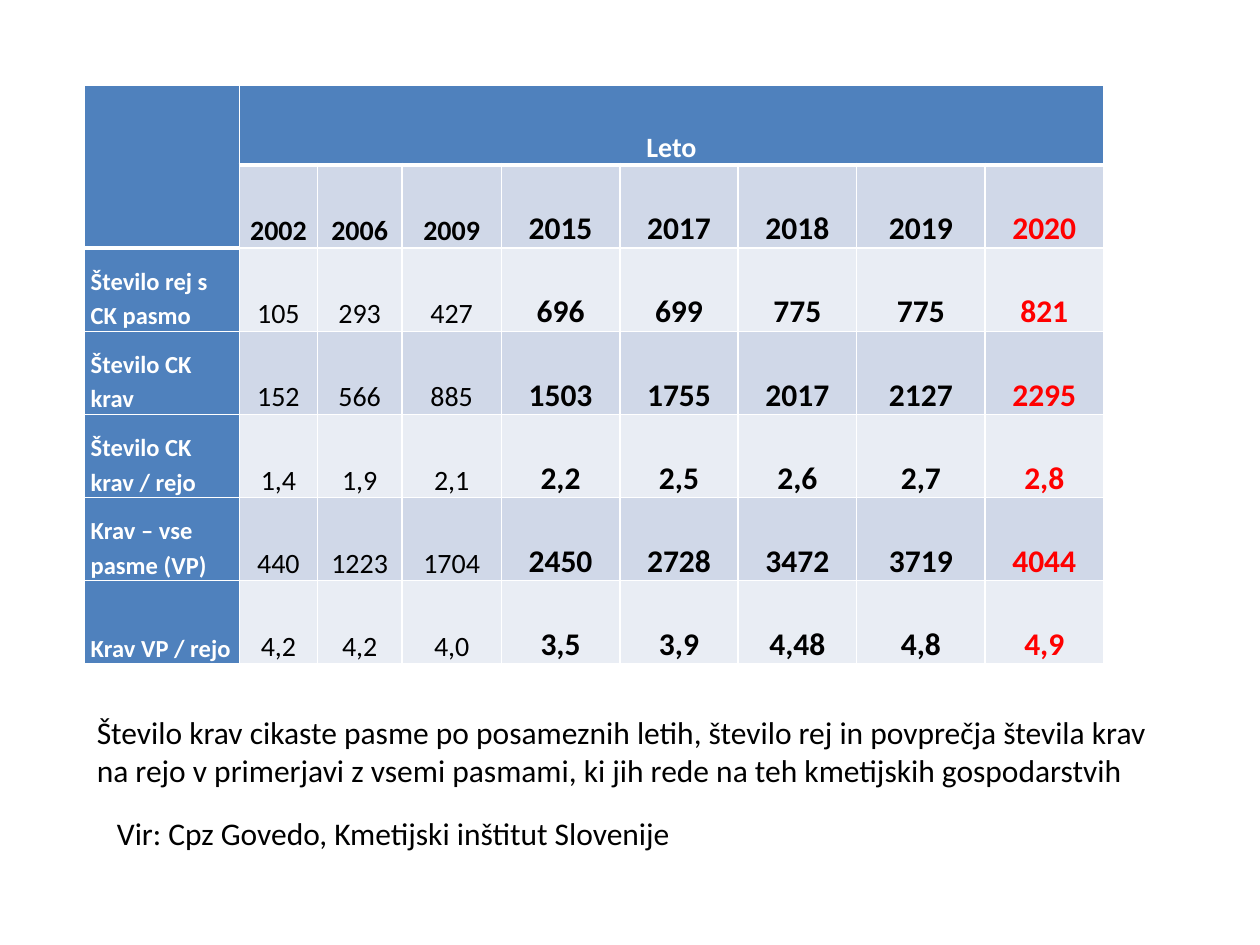
from pptx import Presentation
from pptx.dml.color import RGBColor
from pptx.enum.text import MSO_ANCHOR as Anchor, PP_ALIGN as Align
from pptx.oxml import parse_xml
from pptx.oxml.ns import nsdecls
from pptx.util import Inches, Pt

YEARS = ["2002", "2006", "2009", "2015", "2017", "2018", "2019", "2020"]
HERD_ROWS = [
    ("Število rej s CK pasmo", "105 293 427 696 699 775 775 821"),
    ("Število CK krav", "152 566 885 1503 1755 2017 2127 2295"),
    ("Število CK krav / rejo", "1,4 1,9 2,1 2,2 2,5 2,6 2,7 2,8"),
    ("Krav – vse pasme (VP)", "440 1223 1704 2450 2728 3472 3719 4044"),
    ("Krav VP / rejo", "4,2 4,2 4,0 3,5 3,9 4,48 4,8 4,9"),
]
COLUMN_WIDTHS = [1.23, 0.62, 0.67, 0.79, 0.94, 0.94, 0.94, 1.02, 0.94]
ROW_HEIGHTS = [0.63] + [0.66] * 6
FIRST_LARGE_COLUMN = 4
LAST_COLUMN = len(YEARS)
CAPTION = ("Število krav cikaste pasme po posameznih letih, število rej in povprečja "
           "števila krav na rejo v primerjavi z vsemi pasmami, ki jih rede na teh "
           "kmetijskih gospodarstvih")
SOURCE = "Vir: Cpz Govedo, Kmetijski inštitut Slovenije"


def color(value):
    return RGBColor.from_string(value)


class SlideMaker:
    font = "Calibri"
    black, white, red = "000000", "FFFFFF", "FF0000"
    header_fill = "4F81BD"
    bands = ["E9EDF4", "D0D8E8"]

    def __init__(self, page):
        self.page = page

    def add_text(self, frame, text, size, ink, bold=False):
        para = frame.paragraphs[0]
        span = para.add_run()
        span.text = text
        formats = {"name": self.font, "size": Pt(size), "bold": bold}
        for name, value in formats.items():
            setattr(span.font, name, value)
        span.font.color.rgb = color(ink)
        return para

    def text_box(self, left, top, width, height, text):
        box = self.page.shapes.add_textbox(
            Inches(left), Inches(top), Inches(width), Inches(height))
        box.text_frame.word_wrap = True
        self.add_text(box.text_frame, text, 18, self.black)

    def table(self, left, top, widths, heights):
        table = self.page.shapes.add_table(
            len(heights), len(widths), Inches(left), Inches(top),
            Inches(sum(widths)), Inches(sum(heights))).table
        table.first_row = table.horz_banding = False
        for column, width in zip(table.columns, widths):
            column.width = Inches(width)
        for row, height in zip(table.rows, heights):
            row.height = Inches(height)
        return table

    def borders(self, cell, top=1, bottom=1):
        """Draw white cell borders; widths are in points."""
        for side, width in {"L": 1, "R": 1, "T": top, "B": bottom}.items():
            cell._tc.get_or_add_tcPr().append(parse_xml(
                f'<a:ln{side} {nsdecls("a")} w="{Pt(width)}"><a:solidFill>'
                f'<a:srgbClr val="{self.white}"/></a:solidFill></a:ln{side}>'))

    def cell(self, cell, fill, text="", size=16, ink=white, bold=True,
             align=Align.CENTER, top=1, bottom=1):
        self.borders(cell, top, bottom)
        cell.fill.solid()
        cell.fill.fore_color.rgb = color(fill)
        formats = {"vertical_anchor": Anchor.BOTTOM,
                   "margin_left": Inches(0.05), "margin_right": Inches(0.05),
                   "margin_top": 0, "margin_bottom": 0}
        for name, value in formats.items():
            setattr(cell, name, value)
        if text:
            para = self.add_text(cell.text_frame, text, size, ink, bold)
            para.alignment = align
            para.line_spacing = 1.15

    def herd_table(self):
        table = self.table(0.67, 0.68, COLUMN_WIDTHS, ROW_HEIGHTS)
        table.cell(0, 0).merge(table.cell(1, 0))
        table.cell(0, 1).merge(table.cell(0, LAST_COLUMN))
        for column in range(LAST_COLUMN + 1):
            self.cell(table.cell(0, column), self.header_fill,
                      "Leto" if column == 1 else "", bottom=3)
        self.cell(table.cell(1, 0), self.header_fill, bottom=3)

        body = [("", YEARS)] + [(label, text.split()) for label, text in HERD_ROWS]
        for row, (label, values) in enumerate(body, start=1):
            is_year_row = row == 1
            if label:
                self.cell(table.cell(row, 0), self.header_fill, label, size=14,
                          align=Align.LEFT, top=3 if row == 2 else 1)
            for column, value in enumerate(values, start=1):
                large = column >= FIRST_LARGE_COLUMN
                self.cell(table.cell(row, column), self.bands[row % 2], value,
                          size=18 if large else 16,
                          ink=self.red if column == LAST_COLUMN else self.black,
                          bold=large or is_year_row,
                          top=3 if is_year_row else 1)


def main():
    deck = Presentation()
    deck.slide_width, deck.slide_height = Inches(10), Inches(7.5)
    maker = SlideMaker(deck.slides.add_slide(deck.slide_layouts[6]))
    maker.herd_table()
    maker.text_box(0.67, 5.61, 8.74, 0.71, CAPTION)
    maker.text_box(0.83, 6.41, 5, 0.4, SOURCE)
    deck.save("out.pptx")


if __name__ == "__main__":
    main()
